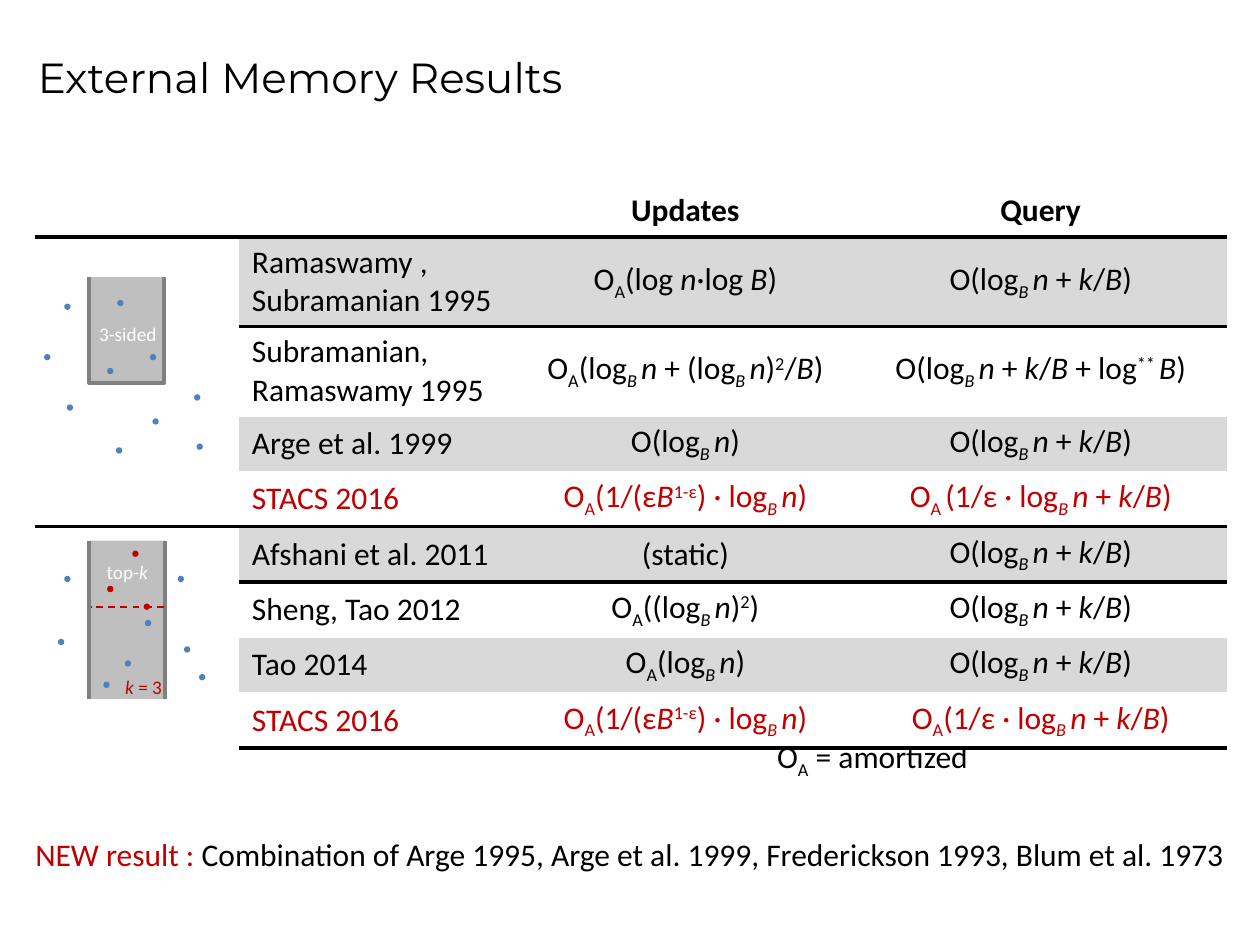
import itertools
import pptx
import pptx.dml.color
import pptx.enum.dml
import pptx.enum.shapes
import pptx.enum.text
import pptx.oxml
import pptx.oxml.ns
import pptx.util

THEME = {
    "black": "000000", "white": "FFFFFF", "red": "C00000", "blue": "4F81BD",
    "band": "D9D9D9", "region": "BFBFBF", "edge": "808080",
    "body": "Calibri", "heading": "Montserrat",
    "title_size": 24, "text_size": 18, "label_size": 11,
    "thick": 2.25, "thin": 1,
}
WIDTH, HEIGHT = 10, 7.5
DOT = 0.05

# In the texts _ toggles subscript, ^ superscript and ~ italics.
TITLE = "External Memory Results"
LOG = "log~_B _n~"
QUERY = f"O({LOG} + ~k~/~B~)"
NEW_UPDATE = f"O_A_(1/(ε~B~^1-ε^) · {LOG})"
RESULTS = [
    ("", "Updates", "Query"),
    ("Ramaswamy , Subramanian 1995", "O_A_(log ~n~·log ~B~)", QUERY),
    ("Subramanian, Ramaswamy 1995", f"O_A_({LOG} + ({LOG})^2^/~B~)",
     f"O({LOG} + ~k~/~B ~+ log^** ^~B~)"),
    ("Arge et al. 1999", f"O({LOG})", QUERY),
    ("STACS 2016", NEW_UPDATE, f"O_A _(1/ε · {LOG} + ~k~/~B~)"),
    ("Afshani et al. 2011", "(static)", QUERY),
    ("Sheng, Tao 2012", f"O_A_(({LOG})^2^)", QUERY),
    ("Tao 2014", f"O_A_({LOG})", QUERY),
    ("STACS 2016", NEW_UPDATE, f"O_A_(1/ε · {LOG} + ~k~/~B~)"),
]
COLUMNS = (1.62, 2.2, 2.68, 2.96)
ROW = 0.41
GROUPS = ((1, 4), (5, 8))
NEW_ROWS = (4, 8)
GROUP_RULES = (0, 4, 8)
RESULT_RULES = (0, 1, 4, 5, 8)

THREE_SIDED_DOTS = {"blue": [
    (1.56, 3.52), (0.93, 2.38), (1.21, 3.32), (0.85, 2.92), (0.51, 2.41),
    (0.35, 2.81), (1.54, 3.13), (0.53, 3.21), (0.92, 3.55), (1.19, 2.81)]}
TOP_K_DOTS = {
    "red": [(1.05, 4.37), (1.14, 4.79), (0.85, 4.65)],
    "blue": [(0.82, 5.41), (1.15, 4.92), (0.46, 5.07), (0.99, 5.24), (1.58, 5.35),
             (1.46, 5.13), (1.41, 4.57), (0.51, 4.57)]}
AMORTIZED = [("O_A_ = amortized", "black")]
CONCLUSION = [
    ("NEW result :", "red"),
    (" Combination of Arge 1995, Arge et al. 1999, Frederickson 1993, Blum et al. 1973", "black")]

inch = pptx.util.Inches
CENTER = pptx.enum.text.PP_ALIGN.CENTER
LEFT = pptx.enum.text.PP_ALIGN.LEFT
MIDDLE = pptx.enum.text.MSO_ANCHOR.MIDDLE


def rgb(name):
    return pptx.dml.color.RGBColor.from_string(THEME[name])


def write(paragraph, text, color="black", size="text_size", face="body", bold=False):
    italic, baseline = False, 0
    for is_mark, letters in itertools.groupby(text, key=lambda letter: letter in "_^~"):
        if not is_mark:
            run = paragraph.add_run()
            run.text = "".join(letters)
            look = {"name": THEME[face], "size": pptx.util.Pt(THEME[size]),
                    "bold": bold, "italic": italic}
            for key, value in look.items():
                setattr(run.font, key, value)
            run.font.color.rgb = rgb(color)
            if baseline:
                run._r.get_or_add_rPr().set("baseline", str(baseline))
            continue
        for mark in letters:
            if mark == "~":
                italic = not italic
            else:
                baseline = 0 if baseline else {"_": -25000, "^": 30000}[mark]


def add_text(shapes, place, parts, size="text_size", side=0.1):
    frame = shapes.add_textbox(*map(inch, place)).text_frame
    layout = {"word_wrap": True, "margin_left": inch(side), "margin_right": inch(side)}
    for key, value in layout.items():
        setattr(frame, key, value)
    frame.paragraphs[0].alignment = CENTER
    for text, color in parts:
        write(frame.paragraphs[0], text, color, size)


def paint(shape, fill, line=None):
    shape.shadow.inherit = False
    shape.fill.solid()
    shape.fill.fore_color.rgb = rgb(fill)
    if line:
        shape.line.color.rgb = rgb(line)
        shape.line.width = pptx.util.Pt(THEME["thick"])
    else:
        shape.line.fill.background()


def add_line(shapes, start, end, color, weight, dashed=False):
    line = shapes.add_connector(
        pptx.enum.shapes.MSO_CONNECTOR.STRAIGHT, *map(inch, (*start, *end)))
    line.line.color.rgb = rgb(color)
    line.line.width = pptx.util.Pt(THEME[weight])
    if dashed:
        line.line.dash_style = pptx.enum.dml.MSO_LINE.DASH
    pptx.oxml.ns.qn("a:effectLst")
    line._element.spPr.append(pptx.oxml.parse_xml(
        f'<a:effectLst {pptx.oxml.ns.nsdecls("a")}/>'))


def add_dots(shapes, dots):
    for color, places in dots.items():
        for left, top in places:
            dot = shapes.add_shape(pptx.enum.shapes.MSO_SHAPE.OVAL,
                                   *map(inch, (left, top, DOT, DOT)))
            paint(dot, color)


def set_border(cell, side, color=None, weight="thin"):
    paint_xml = (f'<a:solidFill><a:srgbClr val="{THEME[color]}"/></a:solidFill>'
                 if color else "<a:noFill/>")
    cell._tc.get_or_add_tcPr().append(pptx.oxml.parse_xml(
        f'<a:ln{side} {pptx.oxml.ns.nsdecls("a")} w="{int(THEME[weight] * 12700)}">'
        f"{paint_xml}</a:ln{side}>"))


def rule_below(row, column):
    ruled = row in (RESULT_RULES if column else GROUP_RULES)
    return ("black", "thick") if ruled else ("white", "thin")


def add_results(shapes):
    table = shapes.add_table(
        len(RESULTS), len(COLUMNS),
        *map(inch, (0.28, 1.47, sum(COLUMNS), ROW * len(RESULTS)))).table
    table.first_row = table.horz_banding = False
    for column, width in zip(table.columns, COLUMNS):
        column.width = inch(width)
    for first, last in GROUPS:
        table.cell(first, 0).merge(table.cell(last, 0))
    for row, texts in enumerate(RESULTS):
        table.rows[row].height = inch(ROW)
        for column, text in enumerate(("", *texts)):
            cell = table.cell(row, column)
            set_border(cell, "L")
            set_border(cell, "R")
            set_border(cell, "T", *rule_below(row - 1, column))
            set_border(cell, "B", *rule_below(row, column))
            if column and row % 2:
                cell.fill.solid()
                cell.fill.fore_color.rgb = rgb("band")
            else:
                cell.fill.background()
            cell.vertical_anchor = MIDDLE
            paragraph = cell.text_frame.paragraphs[0]
            paragraph.alignment = CENTER if column > 1 else LEFT
            write(paragraph, text, "red" if row in NEW_ROWS else "black", bold=row == 0)


def add_three_sided(shapes):
    left, top, right, bottom = 0.71, 2.2, 1.3, 3.04
    outline = shapes.build_freeform(inch(left), inch(top), scale=1.0)
    corners = [(left, bottom), (right, bottom), (right, top)]
    outline.add_line_segments([tuple(map(inch, corner)) for corner in corners], close=False)
    paint(outline.convert_to_shape(), "region", "edge")
    add_text(shapes, (left, 2.51, 0.61, 0.29), [("3-sided", "white")], "label_size", 0)
    add_dots(shapes, THREE_SIDED_DOTS)


def add_top_k(shapes):
    left, top, width, height = 0.71, 4.29, 0.6, 1.26
    region = shapes.add_shape(pptx.enum.shapes.MSO_SHAPE.RECTANGLE,
                              *map(inch, (left, top, width, height)))
    paint(region, "region")
    for side in (left, left + width):
        add_line(shapes, (side, top), (side, top + height), "edge", "thick")
    add_text(shapes, (left, 4.4, width, 0.29), [("top-~k~", "white")], "label_size")
    add_line(shapes, (1.3, 4.82), (0.72, 4.82), "red", "thin", dashed=True)
    add_text(shapes, (0.84, 5.31, width, 0.29), [("~k~ = 3", "red")], "label_size")
    add_dots(shapes, TOP_K_DOTS)


def main():
    deck = pptx.Presentation()
    deck.slide_width, deck.slide_height = inch(WIDTH), inch(HEIGHT)
    slide = deck.slides.add_slide(deck.slide_layouts[5])
    title = slide.shapes.title
    for key, value in {"left": 0.2, "top": 0.3, "width": 6.3, "height": 0.61}.items():
        setattr(title, key, inch(value))
    title.text_frame.vertical_anchor = MIDDLE
    title.text_frame.paragraphs[0].alignment = LEFT
    write(title.text_frame.paragraphs[0], TITLE, size="title_size", face="heading")
    add_results(slide.shapes)
    add_text(slide.shapes, (4.21, 5.8, 5.43, 0.4), AMORTIZED)
    add_three_sided(slide.shapes.add_group_shape().shapes)
    add_top_k(slide.shapes.add_group_shape().shapes)
    add_text(slide.shapes, (0, 6.58, WIDTH, 0.4), CONCLUSION)
    deck.save("out.pptx")


if __name__ == "__main__":
    main()
